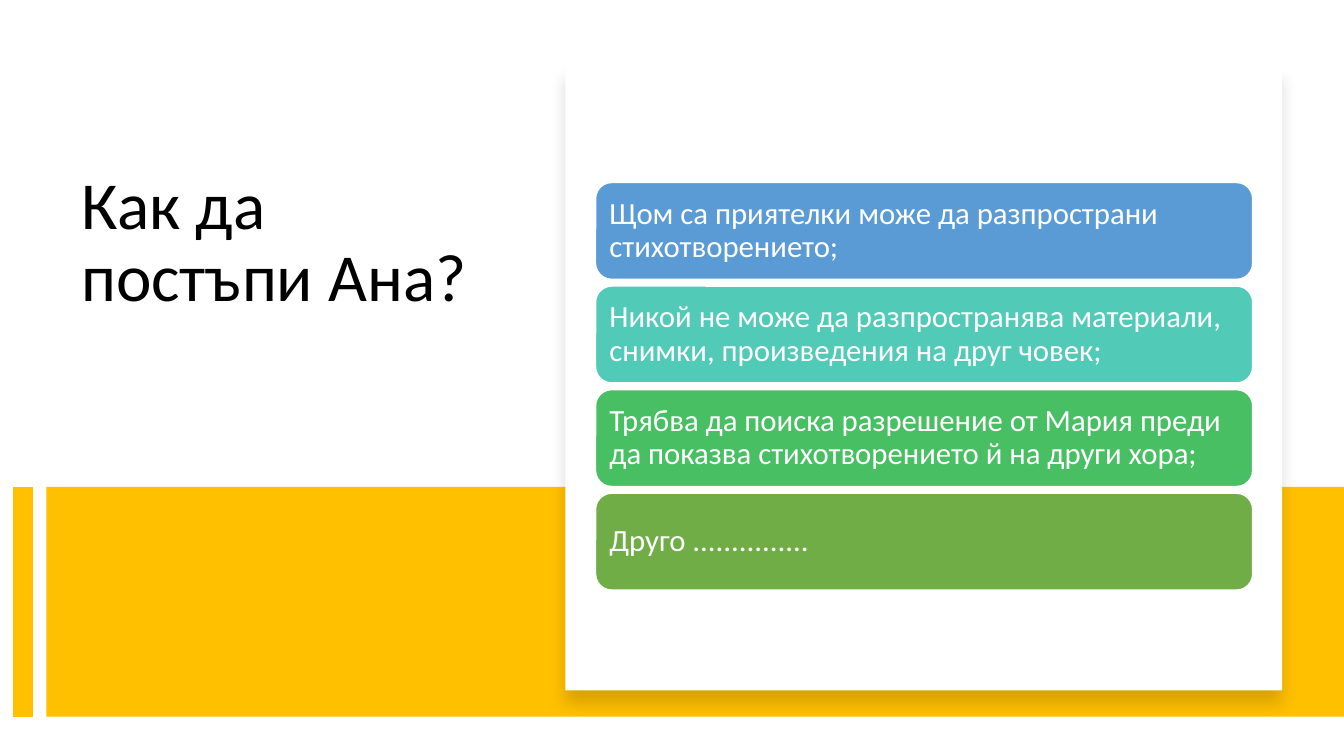
from lxml.etree import SubElement
from pptx import Presentation
from pptx.dml.color import RGBColor
from pptx.enum.shapes import MSO_CONNECTOR as Connector, MSO_SHAPE as Shape
from pptx.enum.text import MSO_ANCHOR as Anchor, PP_ALIGN as Align
from pptx.oxml.ns import qn
from pptx.util import Cm, Pt

WHITE = RGBColor(0xFF, 0xFF, 0xFF)
BLACK = RGBColor(0x00, 0x00, 0x00)
AMBER = RGBColor(0xFF, 0xC0, 0x00)
BLUE = RGBColor(0x5B, 0x9B, 0xD5)
TEAL = RGBColor(0x52, 0xCA, 0xB8)
GREEN = RGBColor(0x49, 0xBF, 0x64)
OLIVE = RGBColor(0x70, 0xAD, 0x47)

FONT = "Calibri"
BAND_TOP, BAND_HEIGHT = 12.27, 5.79
ANSWER_TOP, ANSWER_HEIGHT, ANSWER_STEP = 4.6, 2.44, 2.61

ANSWERS = [
    ("Щом са приятелки може да разпространи стихотворението;", BLUE),
    ("Никой не може да разпространява материали, снимки, произведения на друг човек;", TEAL),
    ("Трябва да поиска разрешение от Мария преди да показва стихотворението й на други хора;", GREEN),
    ("Друго ...............", OLIVE),
]


def write_text(box, text, *, size, color, anchor, inset):
    """Fill a box with one left-aligned paragraph."""
    frame = box.text_frame
    frame.word_wrap = True
    frame.vertical_anchor = anchor
    frame.margin_left = frame.margin_right = Cm(inset)
    frame.margin_top = frame.margin_bottom = Cm(inset)
    para = frame.paragraphs[0]
    para.alignment = Align.LEFT
    para.line_spacing = 0.9
    span = para.add_run()
    span.text = text
    span.font.name = FONT
    span.font.size = Pt(size)
    span.font.color.rgb = color


def add_block(page, kind, left, top, width, height, fill, line=None):
    block = page.shapes.add_shape(kind, Cm(left), Cm(top), Cm(width), Cm(height))
    block.shadow.inherit = False
    block.fill.solid()
    block.fill.fore_color.rgb = fill
    if line is None:
        block.line.fill.background()
    else:
        block.line.color.rgb = line
        block.line.width = Pt(1)
    return block


def add_bar(page, x, top, height, color, width):
    bar = page.shapes.add_connector(
        Connector.STRAIGHT, Cm(x), Cm(top), Cm(x), Cm(top + height))
    bar.line.color.rgb = color
    bar.line.width = Pt(width)
    SubElement(bar._element.spPr, qn("a:effectLst"))


def drop_shadow(block, blur, distance, opacity):
    """Cast a soft black shadow straight down."""
    effects = block._element.spPr.find(qn("a:effectLst"))
    shadow = SubElement(
        effects, qn("a:outerShdw"), blurRad=str(Pt(blur)), dist=str(Pt(distance)),
        dir="5400000", algn="t", rotWithShape="0")
    color = SubElement(shadow, qn("a:srgbClr"), val=str(BLACK))
    SubElement(color, qn("a:alpha"), val=str(opacity * 1000))


def add_title(page, text):
    box = page.shapes.add_textbox(Cm(1.8), Cm(4.06), Cm(10.54), Cm(7.47))
    write_text(box, text, size=48, color=BLACK, anchor=Anchor.TOP, inset=0.25)


def add_answer(page, top, text, fill):
    box = add_block(page, Shape.ROUNDED_RECTANGLE, 15.01, top, 16.56,
                    ANSWER_HEIGHT, fill, line=WHITE)
    write_text(box, text, size=22, color=WHITE, anchor=Anchor.MIDDLE, inset=0.23)


def main():
    deck = Presentation()
    deck.slide_width, deck.slide_height = Cm(33.87), Cm(19.05)
    page = deck.slides.add_slide(deck.slide_layouts[6])

    # Question and amber band
    add_title(page, "Как да постъпи Ана?")
    add_block(page, Shape.RECTANGLE, 1.17, BAND_TOP, 32.7, BAND_HEIGHT, AMBER)
    add_bar(page, 0.58, BAND_TOP, BAND_HEIGHT, AMBER, 14)

    # White card
    card = add_block(page, Shape.RECTANGLE, 14.25, 1.63, 18.06, 15.77, WHITE)
    drop_shadow(card, blur=11, distance=10, opacity=15)

    # Possible answers
    for index, (text, fill) in enumerate(ANSWERS):
        add_answer(page, ANSWER_TOP + index * ANSWER_STEP, text, fill)

    deck.save("out.pptx")


if __name__ == "__main__":
    main()
